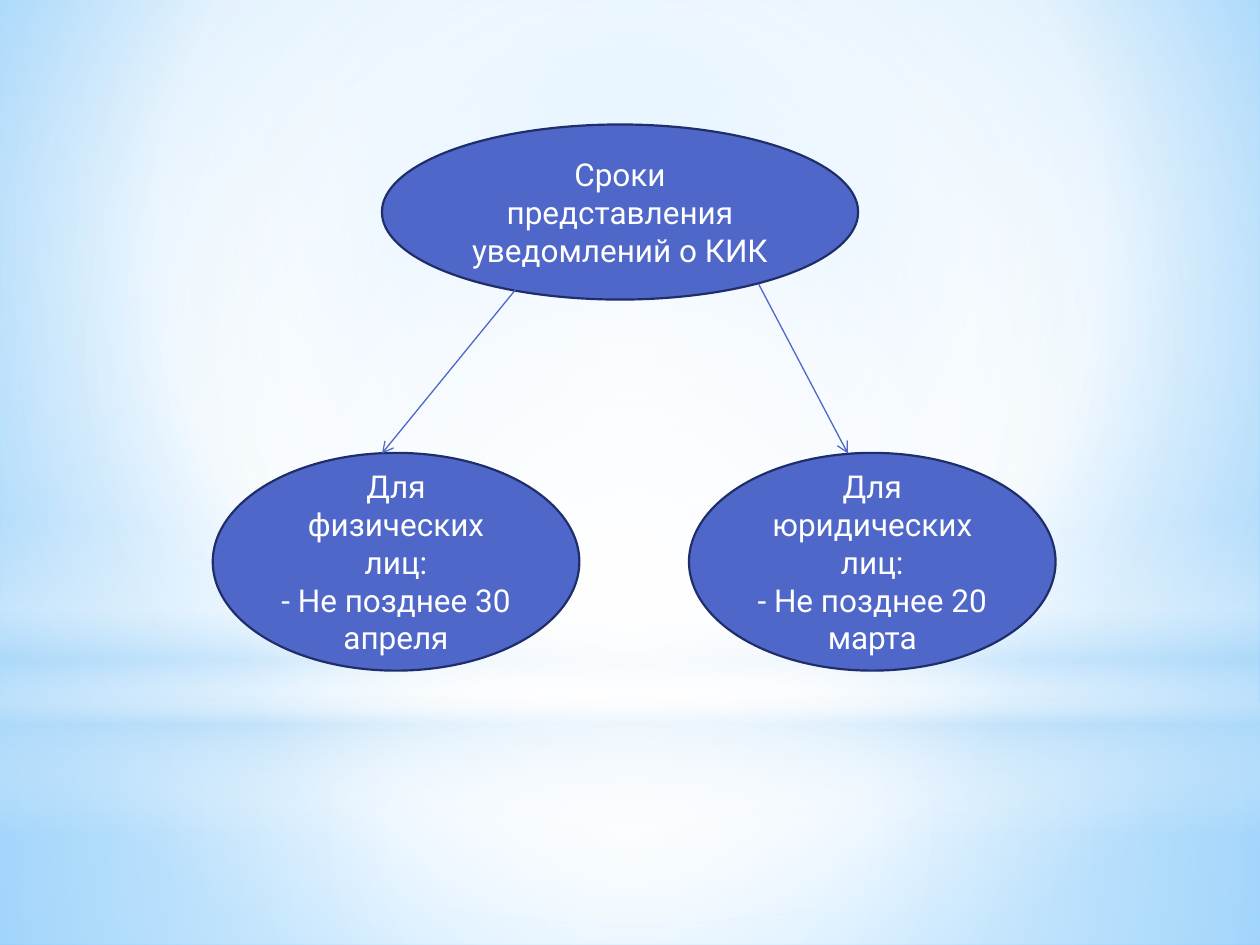
from lxml.etree import SubElement
from pptx import Presentation
from pptx.dml.color import RGBColor
from pptx.enum.shapes import MSO_CONNECTOR as Link, MSO_SHAPE as Form
from pptx.enum.text import MSO_ANCHOR as Anchor, PP_ALIGN as Align
from pptx.oxml.ns import qn
from pptx.util import Cm, Pt

WIDTH, HEIGHT = 25.4, 19.05
HORIZON = 14.17
CENTRE = (50, 50, 50, 50)


def colour(code):
    return RGBColor.from_string(code)


def set_gradient(owner, fill, stops, focus=None):
    fill.gradient()
    gradient = owner.find(".//" + qn("a:gradFill"))
    for child in list(gradient):
        gradient.remove(child)
    stop_list = SubElement(gradient, qn("a:gsLst"))
    for position, code, opacity in stops:
        stop = SubElement(stop_list, qn("a:gs"), pos=str(position * 1000))
        tone = SubElement(stop, qn("a:srgbClr"), val=code)
        if opacity < 100:
            SubElement(tone, qn("a:alpha"), val=str(opacity * 1000))
    if focus:
        circle = SubElement(gradient, qn("a:path"), path="circle")
        edges = {side: str(value * 1000) for side, value in zip("ltrb", focus)}
        SubElement(circle, qn("a:fillToRect"), **edges)
    else:
        SubElement(gradient, qn("a:lin"), ang="5400000", scaled="0")


class Diagram:
    font, size, ink = "Roboto", Pt(18), "FFFFFF"
    body, outline = "4E67C8", "1F2E69"

    def __init__(self, slide):
        self.slide = slide

    def backdrop(self, stops, focus):
        set_gradient(self.slide._element, self.slide.background.fill, stops, focus)

    def form(self, kind, box):
        shape = self.slide.shapes.add_shape(kind, *map(Cm, box))
        shape.shadow.inherit = False
        return shape

    def glow(self, kind, top, height, stops, focus=None):
        light = self.form(kind, (0, top, WIDTH, height))
        light.line.fill.background()
        set_gradient(light._element, light.fill, stops, focus)

    def oval(self, box, text):
        bubble = self.form(Form.OVAL, box)
        bubble.fill.solid()
        bubble.fill.fore_color.rgb = colour(self.body)
        bubble.line.color.rgb = colour(self.outline)
        bubble.line.width = Pt(1.25)
        frame = bubble.text_frame
        frame.text = text
        frame.word_wrap = True
        frame.vertical_anchor = Anchor.MIDDLE
        for paragraph in frame.paragraphs:
            paragraph.alignment = Align.CENTER
            for run in paragraph.runs:
                run.font.name = self.font
                run.font.size = self.size
                run.font.color.rgb = colour(self.ink)

    def arrow(self, start, end):
        branch = self.slide.shapes.add_connector(Link.STRAIGHT, *map(Cm, start + end))
        branch.line.color.rgb = colour(self.body)
        branch.line.width = Pt(0.75)
        SubElement(branch.line._get_or_add_ln(), qn("a:tailEnd"), type="arrow")
        SubElement(branch._element.spPr, qn("a:effectLst"))


def main():
    deck = Presentation()
    deck.slide_width, deck.slide_height = Cm(WIDTH), Cm(HEIGHT)
    diagram = Diagram(deck.slides.add_slide(deck.slide_layouts[6]))

    diagram.backdrop([(0, "9ED5FF", 100), (60, "FFFFFF", 100), (100, "5BB9FF", 100)],
                     (20, 10, 20, 60))
    diagram.glow(Form.RECTANGLE, HORIZON, HEIGHT - HORIZON,
                 [(0, "FFFFFF", 91), (37, "FFFFFF", 76), (100, "B4DCFA", 79)], CENTRE)
    diagram.glow(Form.RECTANGLE, 0, HORIZON,
                 [(0, "FFFFFF", 89), (48, "FFFFFF", 62), (100, "B4DCFA", 79)], CENTRE)
    diagram.glow(Form.RECTANGLE, 10.46, 6.35,
                 [(0, "FFFFFF", 0), (29, "FFFFFF", 30), (45, "B4DCFA", 40),
                  (55, "FFFFFF", 26), (65, "B4DCFA", 60), (100, "FFFFFF", 0)])
    diagram.glow(Form.OVAL, 4.45, HORIZON,
                 [(0, "FFFFFF", 100), (56, "FFFFFF", 0)], CENTRE)

    diagram.oval((7.7, 2.51, 9.6, 3.53), "Сроки представления уведомлений о КИК")
    deadlines = [
        (4.29, "Для физических лиц:\n- Не позднее 30 апреля", (10.49, 5.72), (7.7, 9.14)),
        (13.89, "Для юридических лиц:\n- Не позднее 20 марта", (15.29, 5.72), (17.09, 9.14)),
    ]
    for left, text, start, end in deadlines:
        diagram.oval((left, 9.13, 7.39, 4.39), text)
        diagram.arrow(start, end)

    deck.save("out.pptx")


if __name__ == "__main__":
    main()
